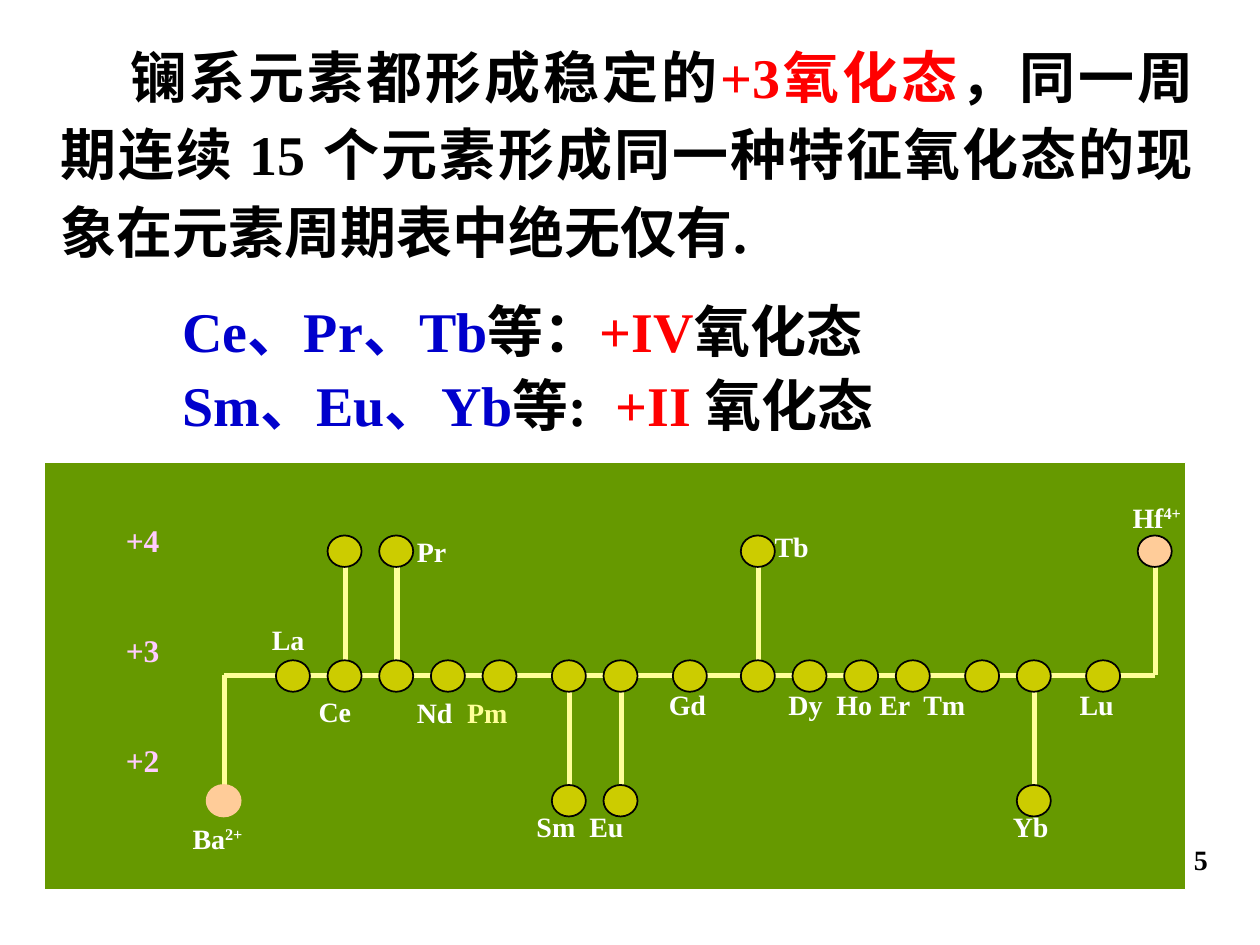
from pptx import Presentation
from pptx.dml.color import RGBColor
from pptx.enum.shapes import MSO_CONNECTOR as Connector, MSO_SHAPE as Shape
from pptx.enum.text import PP_ALIGN as Align
from pptx.oxml.ns import qn
from pptx.util import Pt
from lxml.etree import SubElement

PX = 9144  # EMU per px: 100 px to the inch


class Theme:
    font = "Times New Roman"
    black, white, red, blue = "000000", "FFFFFF", "FF0000", "0000CC"
    green, olive, peach, yellow, pink = "669900", "CCCC00", "FFCC99", "FFFF99", "FFCCFF"
    body, state, label = 32, 18, 16


# Oxidation diagram: horizontal slot of each element on the +3 line
SLOTS = dict(La=0, Ce=3, Pr=6, Nd=9, Pm=12, Sm=16, Eu=19, Gd=23, Tb=27,
             Dy=30, Ho=33, Er=36, Tm=40, Yb=43, Lu=47)
BRANCHES = [("Ce", 4), ("Pr", 4), ("Tb", 4), ("Sm", 2), ("Eu", 2), ("Yb", 2)]
END_IONS = [(-4, 2, Theme.peach), (50, 4, Theme.black)]  # slot, state, outline
DOT_W, DOT_H = 27, 25
# text, superscript, left, top, width, colour
LABELS = [
    ("Ba", "2+", 108, 280, 84, Theme.white), ("Hf", "4+", 854, 25, 84, Theme.white),
    ("La", "", 171, 122, 46, Theme.white), ("Ce", "", 208, 179, 46, Theme.white),
    ("Pr", "", 286, 52, 44, Theme.white), ("Nd", "", 286, 180, 50, Theme.white),
    ("Pm", "", 326, 180, 54, Theme.yellow), ("Sm", "", 381, 271, 54, Theme.white),
    ("Eu", "", 423, 271, 50, Theme.white), ("Gd", "", 486, 174, 50, Theme.white),
    ("Tb", "", 570, 48, 47, Theme.white), ("Dy", "", 581, 174, 50, Theme.white),
    ("Ho", "", 619, 174, 50, Theme.white), ("Er", "", 653, 174, 48, Theme.white),
    ("Tm", "", 688, 174, 56, Theme.white), ("Yb", "", 759, 271, 49, Theme.white),
    ("Lu", "", 812, 174, 47, Theme.white),
]


def rgb(value):
    return RGBColor.from_string(value)


def add_text(parts, box, paras, size, indent=0, **para_format):
    """Each paragraph is a list of (text, colour, run attributes)."""
    frame = parts.add_textbox(*(n * PX for n in box)).text_frame
    frame.word_wrap = True
    for index, spans in enumerate(paras):
        para = frame.add_paragraph() if index else frame.paragraphs[0]
        for name, value in para_format.items():
            setattr(para, name, value)
        if indent:
            para._p.get_or_add_pPr().set("indent", str(indent * PX))
        for text, colour, attributes in spans:
            span = para.add_run()
            span.text = text
            font_format = {"name": Theme.font, "size": Pt(size), "bold": True}
            for name, value in font_format.items():
                setattr(span.font, name, value)
            span.font.color.rgb = rgb(colour)
            for name, value in attributes.items():
                span._r.get_or_add_rPr().set(name, value)


def add_block(parts, kind, box, fill, line, width):
    block = parts.add_shape(kind, *(n * PX for n in box))
    block.shadow.inherit = False
    block.fill.solid()
    block.fill.fore_color.rgb = rgb(fill)
    block.line.color.rgb = rgb(line)
    block.line.width = Pt(width)


def add_line(parts, *ends):
    line = parts.add_connector(Connector.STRAIGHT, *(n * PX for n in ends))
    line.line.color.rgb = rgb(Theme.yellow)
    line.line.width = Pt(3)
    SubElement(line._element.spPr, qn("a:effectLst"))


def add_diagram(page, box):
    left, top, _, _ = box
    parts = page.shapes.add_group_shape().shapes
    add_block(parts, Shape.RECTANGLE, box, Theme.green, Theme.white, 0.75)

    def dot_left(slot):
        return left + 184 + round(slot * 13.68)

    def dot_top(state):
        return top + 157 + 99 * (3 - state)

    def middle(slot):
        return dot_left(slot) + DOT_W // 2 + 1

    # Main line and the stems that leave it
    axis = dot_top(3) + DOT_H // 2
    branches = [(SLOTS[name], state) for name, state in BRANCHES]
    ions = [(slot, state) for slot, state, _ in END_IONS]
    add_line(parts, middle(ions[0][0]), axis, middle(ions[1][0]), axis)
    for slot, state in branches + ions:
        edge = dot_top(state) + (DOT_H if state > 3 else 0)
        add_line(parts, middle(slot), axis, middle(slot), edge)

    # Dots
    dots = [(slot, 3) for slot in SLOTS.values()] + branches
    styled = [(*dot, Theme.olive, Theme.black) for dot in dots]
    styled += [(slot, state, Theme.peach, line) for slot, state, line in END_IONS]
    for slot, state, fill, line in styled:
        add_block(parts, Shape.OVAL, (dot_left(slot), dot_top(state), DOT_W, DOT_H),
                  fill, line, 1)

    # Oxidation states and element symbols
    add_text(parts, (left + 55, top, 70, 256),
             [[(state, Theme.pink, {})] for state in ("+4", "+3", "+2")],
             Theme.state, line_spacing=2.4, space_before=Pt(11))
    for text, power, x, y, width, colour in LABELS:
        spans = [(text, colour, {})]
        if power:
            spans.append((power, colour, {"baseline": "30000"}))
        add_text(parts, (left + x, top + y, width, 37), [spans], Theme.label)


def add_statement(page, box):
    add_text(page.shapes, box, [[
        ("镧系元素都形成稳定的", Theme.black, {}),
        ("+3氧化态", Theme.red, {}),
        ("，同一周期连续 15 个元素形成同一种特征氧化态的现象在元素周期表中绝无仅有.",
         Theme.black, {}),
    ]], Theme.body, indent=56, alignment=Align.JUSTIFY, line_spacing=1.15)


def add_exceptions(page, box):
    add_text(page.shapes, box, [
        [("Ce、Pr、Tb", Theme.blue, {}), ("等：", Theme.black, {}),
         ("+IV", Theme.red, {}), ("氧化态", Theme.black, {})],
        [("Sm、Eu、Yb", Theme.blue, {}), ("等:", Theme.black, {}),
         (" ", Theme.black, {"spc": "800"}),
         ("+II ", Theme.red, {}), ("氧化态", Theme.black, {})],
    ], Theme.body, line_spacing=1.1)


def add_page_number(page, box):
    add_text(page.shapes, box, [[("5 ", Theme.black, {})]], Theme.label,
             alignment=Align.RIGHT)


def main():
    deck = Presentation()
    deck.slide_width, deck.slide_height = 1000 * PX, 750 * PX
    page = deck.slides.add_slide(deck.slide_layouts[6])
    add_diagram(page, (35, 367, 906, 339))
    add_page_number(page, (910, 664, 64, 50))
    add_statement(page, (38, 21, 919, 196))
    add_exceptions(page, (135, 225, 716, 129))
    deck.save("out.pptx")


if __name__ == "__main__":
    main()
